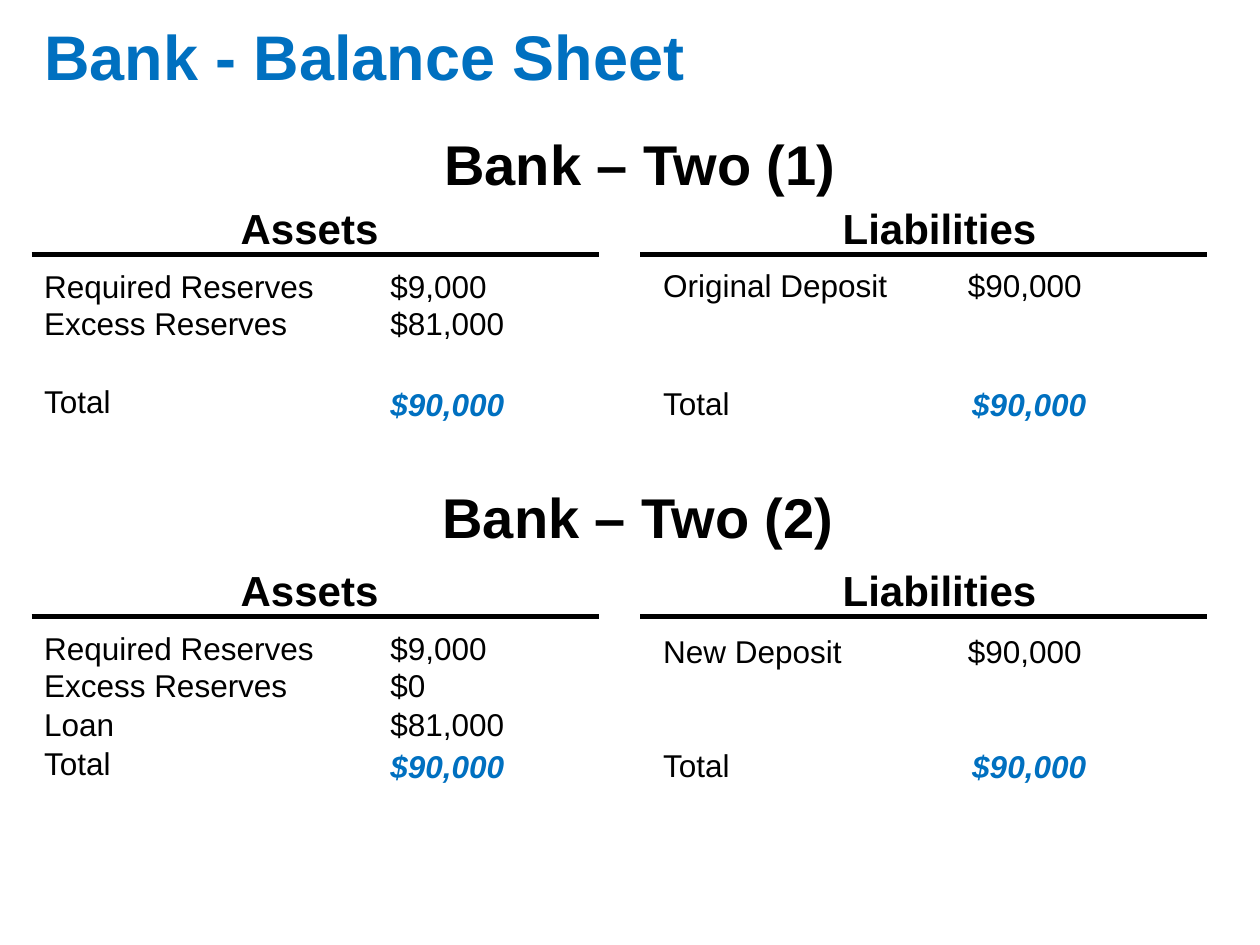
from lxml import etree
from pptx import Presentation
from pptx.dml.color import RGBColor
from pptx.enum.shapes import MSO_CONNECTOR
from pptx.enum.text import MSO_AUTO_SIZE, PP_ALIGN
from pptx.oxml.ns import qn
from pptx.util import Cm, Pt

STRAIGHT = MSO_CONNECTOR.STRAIGHT
FIT_SHAPE = MSO_AUTO_SIZE.SHAPE_TO_FIT_TEXT
LEFT, CENTER = PP_ALIGN.LEFT, PP_ALIGN.CENTER

FONT = "Arial"
BLACK, BLUE = "000000", "0070C0"

# Content; positions in cm, row offsets measured down from the rule
TITLE = "Bank - Balance Sheet"
SHEETS = [
    {
        "heading": "Bank – Two (1)", "heading_at": (8.71, 2.85), "rule_top": 5.13,
        "assets": [("Required Reserves", "$9,000"), ("Excess Reserves", "$81,000")],
        "liability": ("Original Deposit", "$90,000"), "liability_offset": 0.2,
        "total": "$90,000",
    },
    {
        "heading": "Bank – Two (2)", "heading_at": (8.67, 9.98), "rule_top": 12.43,
        "assets": [("Required Reserves", "$9,000"), ("Excess Reserves", "$0"),
                   ("Loan", "$81,000")],
        "liability": ("New Deposit", "$90,000"), "liability_offset": 0.28,
        "total": "$90,000",
    },
]

# Columns: name, rule left, label left, amount left, total left, total label offset
ASSETS = ("Assets", 0.64, 0.64, 7.62, 7.62, 2.54)
LIABILITIES = ("Liabilities", 12.91, 13.12, 19.26, 19.35, 2.58)
ROW_OFFSETS = [0.21, 0.96, 1.75]
TOTAL_OFFSET = 2.6
RULE_WIDTH = 11.43
NAME_OFFSET, NAME_WIDTH = -1.05, 6.56
NAME_LEFTS = {"Assets": 2.96, "Liabilities": 15.66}
LABEL_WIDTH, AMOUNT_WIDTH, ROW_HEIGHT = 6.1, 4.4, 0.94

presentation = Presentation()
presentation.slide_width, presentation.slide_height = Cm(25.4), Cm(19.05)
slide = presentation.slides.add_slide(presentation.slide_layouts[6])


def color(value):
    return RGBColor.from_string(value)


def add_text(text, left, top, width, height=ROW_HEIGHT, size=18, fill=BLACK,
             bold=False, italic=False, align=LEFT, spacing=0.9):
    box = slide.shapes.add_textbox(Cm(left), Cm(top), Cm(width), Cm(height))
    frame = box.text_frame
    frame.text = text
    frame.word_wrap = True
    frame.auto_size = FIT_SHAPE
    paragraph = frame.paragraphs[0]
    paragraph.alignment = align
    paragraph.line_spacing = spacing
    font = paragraph.runs[0].font
    font.name, font.size = FONT, Pt(size)
    font.bold, font.italic = bold, italic
    font.color.rgb = color(fill)


def add_rule(left, top):
    rule = slide.shapes.add_connector(
        STRAIGHT, Cm(left), Cm(top), Cm(left + RULE_WIDTH), Cm(top))
    rule.line.color.rgb = color(BLACK)
    rule.line.width = Pt(3)
    etree.SubElement(rule._element.spPr, qn("a:effectLst"))


def add_column(column, rule_top, entries, offsets, total):
    name, rule_left, label_left, amount_left, total_left, total_label = column
    add_rule(rule_left, rule_top)
    add_text(name, NAME_LEFTS[name], rule_top + NAME_OFFSET, NAME_WIDTH, 1.19,
             size=24, bold=True, align=CENTER)
    for (label, amount), offset in zip(entries, offsets):
        add_text(label, label_left, rule_top + offset, LABEL_WIDTH)
        add_text(amount, amount_left, rule_top + offset, AMOUNT_WIDTH)
    add_text("Total", label_left, rule_top + total_label, LABEL_WIDTH)
    add_text(total, total_left, rule_top + TOTAL_OFFSET, AMOUNT_WIDTH,
             fill=BLUE, bold=True, italic=True)


# Slide title
add_text(TITLE, 0.64, 0.64, 23.7, 1.35, size=36, fill=BLUE, bold=True, spacing=0.7)

# Balance sheets
for sheet in SHEETS:
    add_text(sheet["heading"], *sheet["heading_at"], 9.2, 1.23,
             size=32, bold=True, spacing=0.7)
    add_column(ASSETS, sheet["rule_top"], sheet["assets"], ROW_OFFSETS, sheet["total"])
    add_column(LIABILITIES, sheet["rule_top"], [sheet["liability"]],
               [sheet["liability_offset"]], sheet["total"])

presentation.save("out.pptx")
